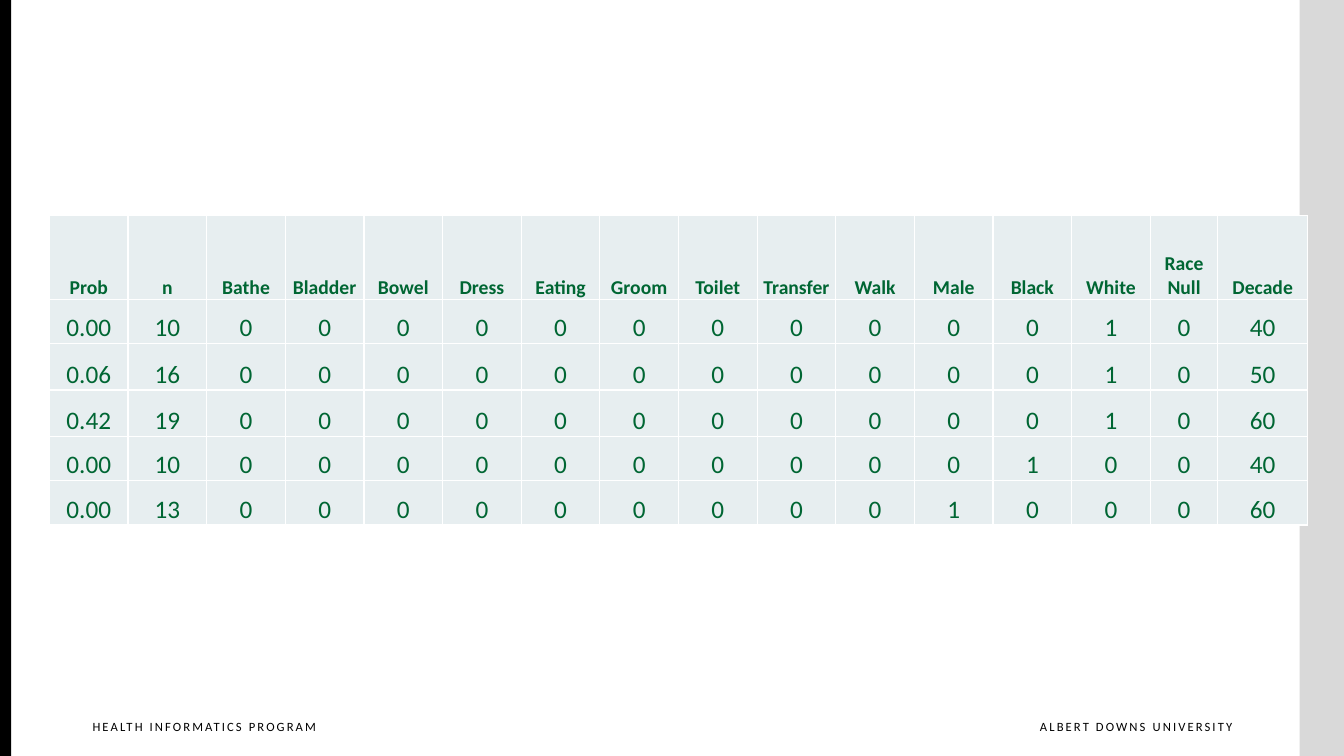
"""Build a slide with a table of outcome probabilities by patient group."""
from lxml import etree
from pptx import Presentation
from pptx.dml.color import RGBColor
from pptx.enum.shapes import MSO_SHAPE
from pptx.enum.text import MSO_ANCHOR, PP_ALIGN
from pptx.oxml.ns import qn
from pptx.util import Inches, Pt

RECT = MSO_SHAPE.RECTANGLE
BOTTOM, TOP = MSO_ANCHOR.BOTTOM, MSO_ANCHOR.TOP
LEFT, CENTER, RIGHT = PP_ALIGN.LEFT, PP_ALIGN.CENTER, PP_ALIGN.RIGHT

FLAGS = ["Bathe", "Bladder", "Bowel", "Dress", "Eating", "Groom", "Toilet",
         "Transfer", "Walk", "Male", "Black", "White", "Race Null"]
HEAD = ["Prob", "n", *FLAGS, "Decade"]
GROUPS = [
    ("0.00", 10, "White", 40),
    ("0.06", 16, "White", 50),
    ("0.42", 19, "White", 60),
    ("0.00", 10, "Black", 40),
    ("0.00", 13, "Male", 60),
]
FOOTERS = [
    ("ALBERT DOWNS UNIVERSITY", 9.87, 2.35, RIGHT),
    ("HEALTH INFORMATICS PROGRAM", 0.82, 2.54, LEFT),
]

WIDE, HIGH = 13.33, 7.5
BARS = [(12.89, 0.44, "gray"), (0, 0.11, "black")]
GRID = (0.49, 2.14)
COLS = [0.78] * 14 + [0.67, 0.89]
ROWS = [0.83, 0.44, 0.46, 0.46, 0.44, 0.44]
FOOT_TOP, FOOT_HIGH = 7.08, 0.33

THEME = {
    "font": "Calibri", "gray": "D9D9D9", "black": "000000",
    "text": "006633", "cell": "E7EEF0", "rule": "FFFFFF",
    "head": 14, "body": 18, "foot": 9, "track": 150, "line": 1,
}


def paint(fill, name):
    fill.solid()
    fill.fore_color.rgb = RGBColor.from_string(THEME[name])


def assign(part, values):
    for key, value in values.items():
        setattr(part, key, value)


def write(frame, text, size, color, align, bold=False):
    line = frame.paragraphs[0]
    line.alignment = align
    run = line.add_run()
    run.text = text
    assign(run.font, {"name": THEME["font"], "size": Pt(THEME[size]), "bold": bold})
    run.font.color.rgb = RGBColor.from_string(THEME[color])
    return run


def rule(cell):
    props = cell._tc.get_or_add_tcPr()
    for spot, side in enumerate(("lnL", "lnR", "lnT", "lnB")):
        edge = etree.Element(qn("a:" + side), w=str(Pt(THEME["line"])))
        fill = etree.SubElement(edge, qn("a:solidFill"))
        etree.SubElement(fill, qn("a:srgbClr"), val=THEME["rule"])
        props.insert(spot, edge)


def add_bars(slide):
    for left, wide, color in BARS:
        bar = slide.shapes.add_shape(RECT, Inches(left), 0, Inches(wide), Inches(HIGH))
        bar.shadow.inherit = False
        bar.line.fill.background()
        paint(bar.fill, color)


def add_footers(slide):
    for text, left, wide, align in FOOTERS:
        area = map(Inches, (left, FOOT_TOP, wide, FOOT_HIGH))
        frame = slide.shapes.add_textbox(*area).text_frame
        assign(frame, {"word_wrap": True, "vertical_anchor": TOP, "margin_right": 0})
        run = write(frame, text, "foot", "black", align)
        run.font._element.set("spc", str(THEME["track"]))


def add_grid(slide):
    data = [HEAD] + [
        [prob, count, *(int(flag == mark) for flag in FLAGS), decade]
        for prob, count, mark, decade in GROUPS
    ]
    area = map(Inches, (*GRID, sum(COLS), sum(ROWS)))
    table = slide.shapes.add_table(len(ROWS), len(COLS), *area).table
    assign(table, {"first_row": False, "horz_banding": False})
    for col, wide in zip(table.columns, COLS):
        col.width = Inches(wide)
    for row, high in zip(table.rows, ROWS):
        row.height = Inches(high)
    pad = Inches(0.01)
    style = {"vertical_anchor": BOTTOM, "margin_left": pad, "margin_right": pad,
             "margin_top": pad, "margin_bottom": 0}
    for r, values in enumerate(data):
        for c, value in enumerate(values):
            cell = table.cell(r, c)
            assign(cell, style)
            paint(cell.fill, "cell")
            rule(cell)
            size = "body" if r else "head"
            write(cell.text_frame, str(value), size, "text", CENTER, r == 0)


def main():
    deck = Presentation()
    assign(deck, {"slide_width": Inches(WIDE), "slide_height": Inches(HIGH)})
    slide = deck.slides.add_slide(deck.slide_layouts[6])
    add_bars(slide)
    add_footers(slide)
    add_grid(slide)
    deck.save("out.pptx")


if __name__ == "__main__":
    main()
